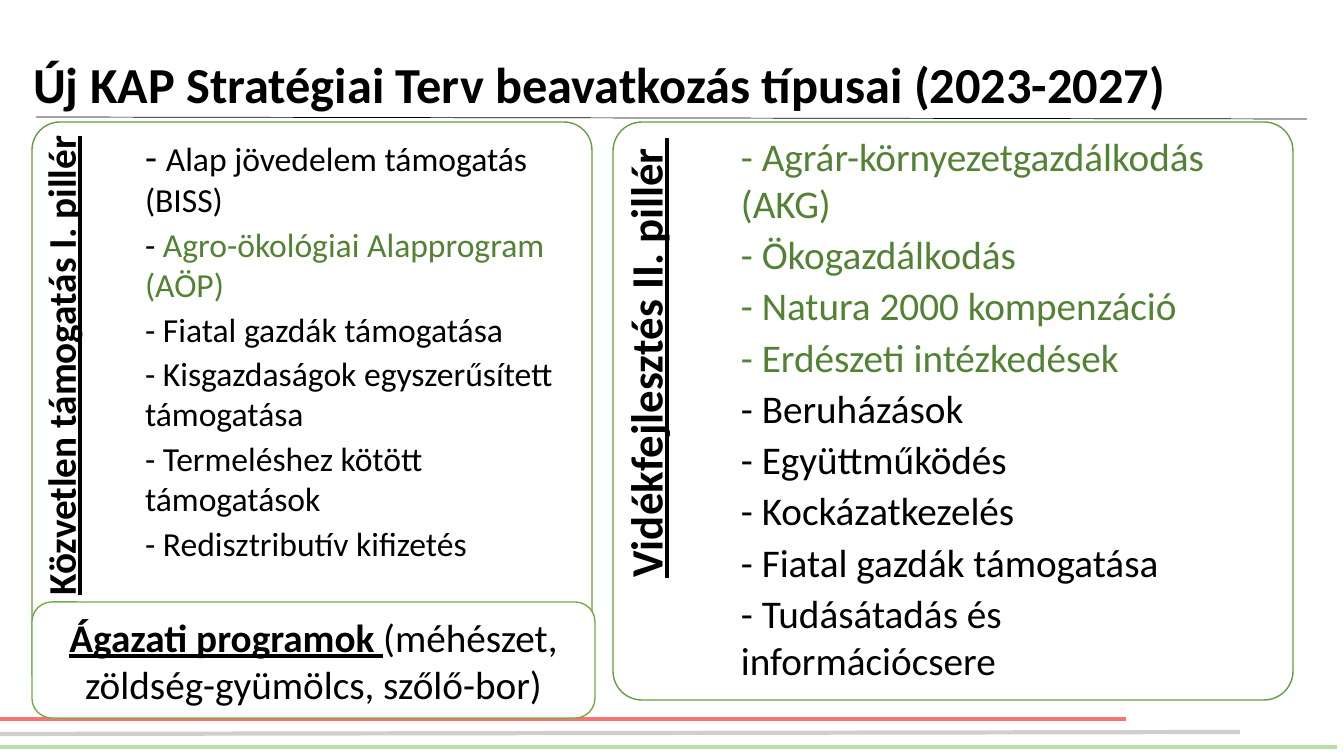
from lxml.etree import SubElement
from pptx import Presentation
from pptx.dml.color import RGBColor
from pptx.enum.shapes import MSO_CONNECTOR as Connector, MSO_SHAPE as Shape
from pptx.enum.text import MSO_ANCHOR as Anchor, PP_ALIGN as Align
from pptx.oxml.ns import qn
from pptx.util import Emu, Pt

EMU_PER_PX = 914400 / 100.8
BLACK, GREEN, BORDER = "000000", "548235", "669D40"


def px(length):
    return Emu(round(length * EMU_PER_PX))


def color(value):
    return RGBColor.from_string(value)


def add_span(para, text, size=24, ink=BLACK, bold=False, underline=False):
    span = para.add_run()
    span.text = text
    font = span.font
    font.name, font.size = "Calibri", Pt(size)
    font.bold, font.underline = bold, underline
    font.color.rgb = color(ink)


class SlideBuilder:
    def __init__(self, deck):
        self.slide = deck.slides.add_slide(deck.slide_layouts[6])

    def line(self, x1, y1, x2, y2, ink, width):
        line = self.slide.shapes.add_connector(
            Connector.STRAIGHT, px(x1), px(y1), px(x2), px(y2))
        line.line.color.rgb = color(ink)
        line.line.width = Pt(width)
        SubElement(line._element.spPr, qn("a:effectLst"))

    def panel(self, x, y, width, height, border=BORDER, corner=0.05):
        panel = self.slide.shapes.add_shape(
            Shape.ROUNDED_RECTANGLE, px(x), px(y), px(width), px(height))
        panel.adjustments[0] = corner
        panel.shadow.inherit = False
        panel.fill.solid()
        panel.fill.fore_color.rgb = color("FFFFFF")
        panel.line.color.rgb = color(border)
        panel.line.width = Pt(1)
        return panel

    def text(self, x, y, width, height, paragraphs, insets=(0, 10, 0, 0),
             anchor=Anchor.TOP, align=Align.LEFT, spacing=1.0, after=0):
        box = self.slide.shapes.add_textbox(px(x), px(y), px(width), px(height))
        self.fill_text(box, paragraphs, insets, anchor, align, spacing, after)
        return box

    def fill_text(self, box, paragraphs, insets, anchor, align, spacing=1.0, after=0):
        frame = box.text_frame
        frame.word_wrap = True
        frame.vertical_anchor = anchor
        (frame.margin_left, frame.margin_top,
         frame.margin_right, frame.margin_bottom) = map(px, insets)
        for index, spans in enumerate(paragraphs):
            para = frame.add_paragraph() if index else frame.paragraphs[0]
            para.alignment = align
            para.line_spacing = spacing
            para.space_after = Pt(after)
            for text, style in spans:
                add_span(para, text, **style)

    def vertical_title(self, x, y, thickness, length, text, size, insets):
        # The box is placed flat, then turned about its centre
        left = x + (thickness - length) / 2
        top = y + (length - thickness) / 2
        style = dict(size=size, bold=True, underline=True)
        box = self.text(left, top, length, thickness, [[(text, style)]],
                        insets=insets, align=Align.RIGHT, spacing=0.9)
        box.rotation = 270


def main():
    deck = Presentation()
    deck.slide_width, deck.slide_height = px(1344), px(756)
    page = SlideBuilder(deck)

    # Footer stripes and title rule
    page.line(0, 719, 1126, 719, "F97376", 3)
    page.line(0, 747, 1337, 747, "BEDCAA", 3)
    page.line(0, 734, 1240, 732, "D0CECE", 3)
    page.line(36, 117, 1307, 119, BLACK, 0.5)

    # Title
    title = "Új KAP Stratégiai Terv beavatkozás típusai (2023-2027)"
    page.text(23, 14, 1159, 146, [[(title, dict(size=36, bold=True))]],
              insets=(10, 5, 10, 5), anchor=Anchor.MIDDLE, spacing=0.9)

    # Pillar I
    top, height = 122, 578
    plain, green = dict(size=24), dict(size=24, ink=GREEN)
    direct_support = [
        [("- ", dict(size=28)), ("Alap jövedelem támogatás (BISS)", plain)],
        [("- ", plain), ("Agro-ökológiai Alapprogram (AÖP)", green)],
    ] + [[("- " + item, plain)] for item in (
        "Fiatal gazdák támogatása",
        "Kisgazdaságok egyszerűsített támogatása",
        "Termeléshez kötött támogatások",
        "Redisztributív kifizetés",
    )]
    page.panel(32, top, 560, height)
    page.vertical_title(32, top, 112, 480, "Közvetlen támogatás I. pillér",
                        28, (0, 10, 14, 0))
    page.text(145, top, 418, height, direct_support, after=3)

    # Pillar II
    green_items = ("Agrár-környezetgazdálkodás (AKG)", "Ökogazdálkodás",
                   "Natura 2000 kompenzáció", "Erdészeti intézkedések")
    other_items = ("Beruházások", "Együttműködés", "Kockázatkezelés",
                   "Fiatal gazdák támogatása", "Tudásátadás és információcsere")
    rural_development = [
        [("- " + item, dict(size=28, ink=ink))]
        for items, ink in ((green_items, GREEN), (other_items, BLACK))
        for item in items
    ]
    page.panel(613, top, 680, height)
    page.vertical_title(612, top, 136, 480, "Vidékfejlesztés II. pillér ",
                        32, (0, 12, 16, 0))
    page.text(741, top, 507, height, rural_development, after=3)

    # Sector programmes
    sectors = page.panel(32, 602, 563, 116, border="70AD47", corner=0.17)
    page.fill_text(sectors, [[
        ("Ágazati programok ", dict(size=28, bold=True, underline=True)),
        ("(méhészet, zöldség-gyümölcs, szőlő-bor)", dict(size=28)),
    ]], (10, 5, 10, 5), Anchor.MIDDLE, Align.CENTER)

    deck.save("out.pptx")


if __name__ == "__main__":
    main()
